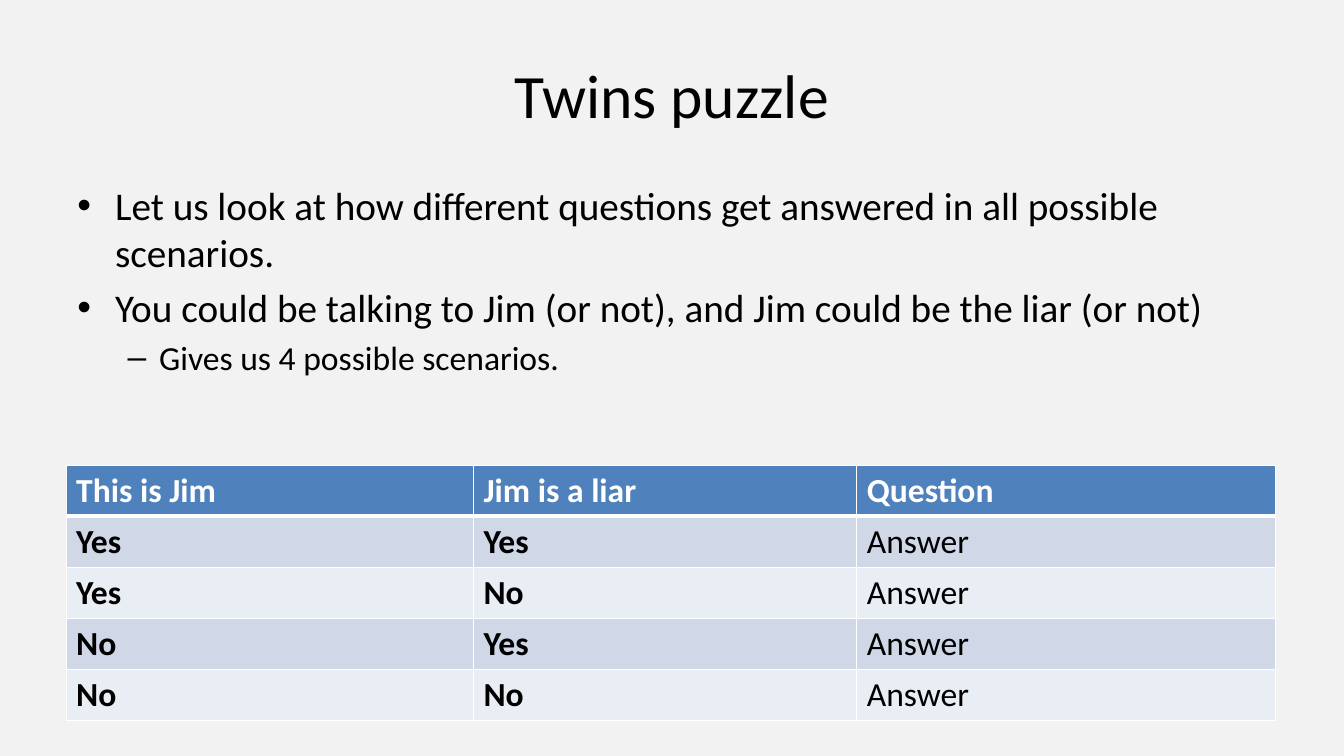
from dataclasses import dataclass

from lxml.etree import SubElement
from pptx import Presentation
from pptx.dml.color import RGBColor
from pptx.enum.text import MSO_ANCHOR as Anchor, PP_ALIGN as Align
from pptx.oxml.ns import qn
from pptx.util import Emu, Pt

PX = 9525  # 96 px to the inch

PAPER = RGBColor(0xF2, 0xF2, 0xF2)
BLACK = RGBColor(0x00, 0x00, 0x00)
WHITE = RGBColor(0xFF, 0xFF, 0xFF)
BLUE = RGBColor(0x4F, 0x81, 0xBD)
DARK = RGBColor(0xD0, 0xD8, 0xE8)
LIGHT = RGBColor(0xE9, 0xED, 0xF4)
FONT = "Calibri"


@dataclass(frozen=True)
class Box:
    left: int
    top: int
    width: int
    height: int


@dataclass(frozen=True)
class Item:
    text: str
    size: int
    level: int = 0


TITLE = Box(64, 29, 1152, 120)
BODY = Box(64, 168, 1097, 532)
GRID = Box(63, 443, 1152, 240)
COLS = (388, 365, 399)

ITEMS = (
    Item("Let us look at how different questions get answered in all possible scenarios.", 28),
    Item("You could be talking to Jim (or not), and Jim could be the liar (or not)", 28),
    Item("Gives us 4 possible scenarios.", 24, 1),
)
HEAD = ("This is Jim", "Jim is a liar", "Question")
ROWS = [(jim, liar, "Answer") for jim in ("Yes", "No") for liar in ("Yes", "No")]


def px(size: int) -> Emu:
    return Emu(size * PX)


def place(shape, box: Box) -> None:
    shape.left, shape.top = px(box.left), px(box.top)
    shape.width, shape.height = px(box.width), px(box.height)


def style(para, size: int, color: RGBColor = BLACK, bold: bool = False) -> None:
    font = para.font
    font.name, font.size, font.bold = FONT, Pt(size), bold
    font.color.rgb = color


def edge(cell, side: str, width: int) -> None:
    props = cell._tc.get_or_add_tcPr()
    line = SubElement(props, qn(f"a:ln{side}"), w=str(Pt(width)))
    fill = SubElement(line, qn("a:solidFill"))
    SubElement(fill, qn("a:srgbClr"), val=str(WHITE))


def add_list(shape, items: tuple[Item, ...]) -> None:
    frame = shape.text_frame
    for i, item in enumerate(items):
        para = frame.add_paragraph() if i else frame.paragraphs[0]
        para.text, para.level = item.text, item.level
        style(para, item.size)


def add_grid(slide, box: Box, rows: list[tuple[str, ...]]) -> None:
    area = map(px, (box.left, box.top, box.width, box.height))
    table = slide.shapes.add_table(len(rows), len(COLS), *area).table
    for col, width in zip(table.columns, COLS):
        col.width = px(width)
    for r, row in enumerate(rows):
        shade = BLUE if r == 0 else DARK if r % 2 else LIGHT
        for c, text in enumerate(row):
            cell = table.cell(r, c)
            cell.text = text
            style(cell.text_frame.paragraphs[0], 24, BLACK if r else WHITE, r == 0 or c < 2)
            # Thick rule between the header and the first row
            for side in "LRTB":
                thick = (r, side) in ((0, "B"), (1, "T"))
                edge(cell, side, 3 if thick else 1)
            cell.fill.solid()
            cell.fill.fore_color.rgb = shade


def main() -> None:
    deck = Presentation()
    deck.slide_width, deck.slide_height = px(1280), px(720)
    slide = deck.slides.add_slide(deck.slide_layouts[1])
    slide.background.fill.solid()
    slide.background.fill.fore_color.rgb = PAPER

    # Title
    title = slide.shapes.title
    place(title, TITLE)
    title.text_frame.text = "Twins puzzle"
    title.text_frame.vertical_anchor = Anchor.MIDDLE
    head = title.text_frame.paragraphs[0]
    head.alignment = Align.CENTER
    style(head, 44)

    # Bullet list
    body = slide.placeholders[1]
    place(body, BODY)
    add_list(body, ITEMS)

    # Table of scenarios
    add_grid(slide, GRID, [HEAD, *ROWS])

    deck.save("out.pptx")


if __name__ == "__main__":
    main()
